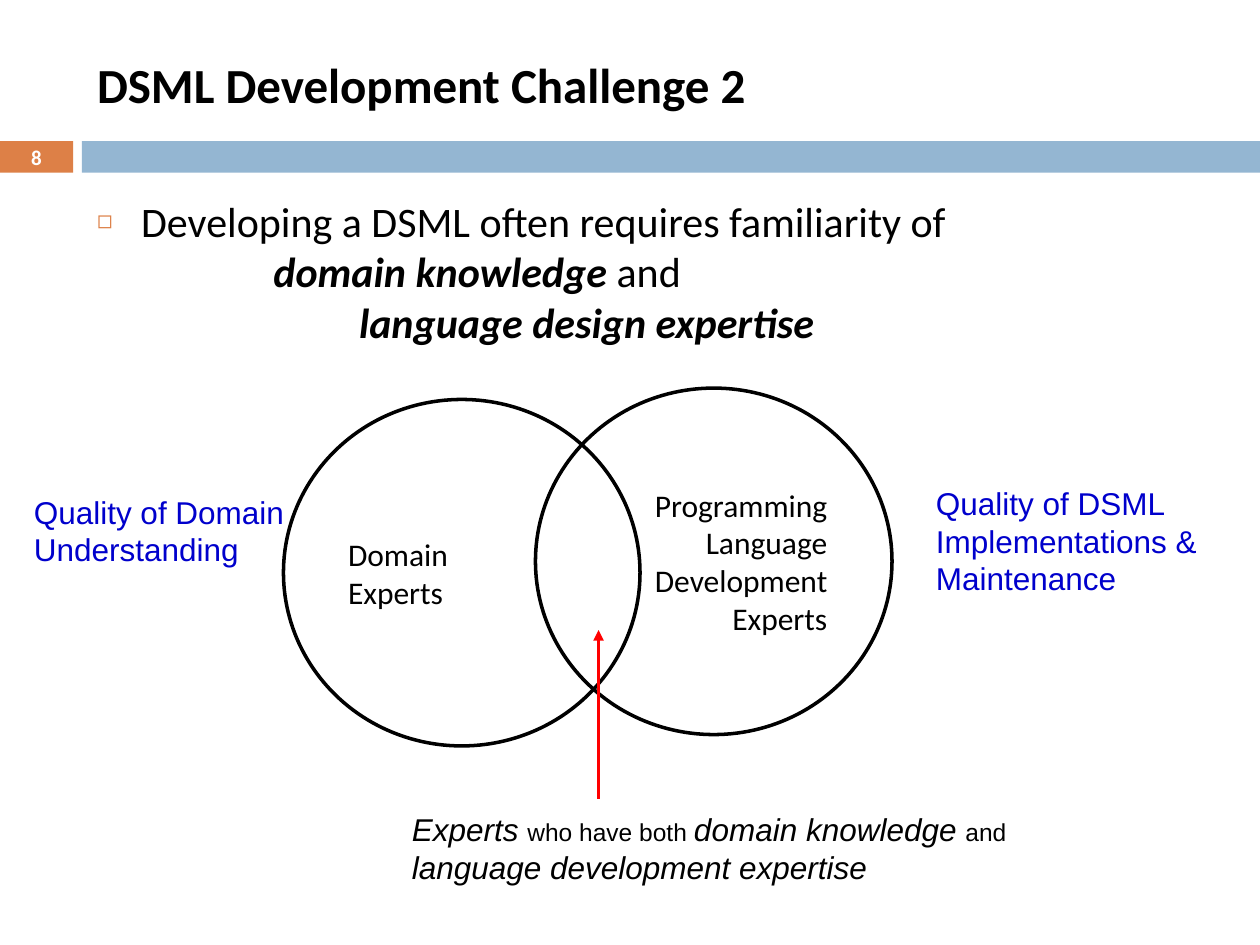
from lxml import etree
from pptx import Presentation
from pptx.dml.color import RGBColor
from pptx.enum import shapes as sh, text as tx
from pptx.oxml.ns import qn
from pptx.util import Inches, Pt

BLACK = RGBColor(0, 0, 0)
WHITE = RGBColor(255, 255, 255)
RED = RGBColor(255, 0, 0)
BLUE = RGBColor(0, 0, 0xCC)
ORANGE = RGBColor(0xDD, 0x80, 0x47)
STEEL = RGBColor(0x94, 0xB6, 0xD2)

LEFT, CENTER, RIGHT = tx.PP_ALIGN.LEFT, tx.PP_ALIGN.CENTER, tx.PP_ALIGN.RIGHT
TOP, MIDDLE = tx.MSO_ANCHOR.TOP, tx.MSO_ANCHOR.MIDDLE


def style(font, size, color=BLACK, name="Calibri", bold=False):
    font.size, font.name, font.bold = Pt(size), name, bold
    font.color.rgb = color


def place(shape, *box):
    shape.left, shape.top, shape.width, shape.height = map(Inches, box)


def frame(shape, anchor):
    body = shape.text_frame
    body.word_wrap = True
    body.auto_size = tx.MSO_AUTO_SIZE.NONE
    body.vertical_anchor = anchor
    return body


def write(shape, words, size, align=LEFT, anchor=MIDDLE, **look):
    par = frame(shape, anchor).paragraphs[0]
    par.text = words
    par.alignment = align
    style(par.font, size, **look)


def add_label(slide, box, words, size, **look):
    label = slide.shapes.add_textbox(*map(Inches, box))
    write(label, words, size, **look)


def add_bar(slide, left, width, color):
    bar = slide.shapes.add_shape(
        sh.MSO_SHAPE.RECTANGLE, *map(Inches, (left, 1.12, width, 0.25)))
    bar.shadow.inherit = False
    bar.fill.solid()
    bar.fill.fore_color.rgb = color
    bar.line.fill.background()


def add_circle(slide, left, top, words, align):
    ring = slide.shapes.add_shape(
        sh.MSO_SHAPE.OVAL, *map(Inches, (left, top, 2.83, 2.75)))
    ring.shadow.inherit = False
    ring.fill.background()
    ring.line.color.rgb = BLACK
    ring.line.width = Pt(2)
    write(ring, words, 18, align)


def add_arrow(slide, x, start, end):
    arrow = slide.shapes.add_connector(
        sh.MSO_CONNECTOR.STRAIGHT, *map(Inches, (x, start, x, end)))
    arrow.line.color.rgb = RED
    arrow.line.width = Pt(2)
    etree.SubElement(arrow.line._get_or_add_ln(), qn("a:tailEnd"), type="triangle")
    etree.SubElement(arrow._element.spPr, qn("a:effectLst"))


def set_bullet(par, margin, mark=None):
    """Set the left margin; with a mark, hang a bullet in that margin."""
    props = par._p.get_or_add_pPr()
    props.set("marL", str(Inches(margin)))
    props.set("indent", str(-Inches(margin) if mark else 0))
    if not mark:
        etree.SubElement(props, qn("a:buNone"))
        return
    color = etree.SubElement(props, qn("a:buClr"))
    etree.SubElement(color, qn("a:srgbClr"), val=str(ORANGE))
    etree.SubElement(props, qn("a:buSzPct"), val="60000")
    etree.SubElement(props, qn("a:buChar"), char=mark)


def fill_body(shape):
    lines = [
        (0.35, "◻", [("Developing a DSML often requires familiarity of", False)]),
        (1.4, None, [("domain knowledge", True), (" and", False)]),
        (2.08, None, [("language design expertise", True)]),
    ]
    body = frame(shape, TOP)
    for i, (margin, mark, runs) in enumerate(lines):
        par = body.add_paragraph() if i else body.paragraphs[0]
        par.space_before = Pt(0 if i else 7)
        set_bullet(par, margin, mark)
        for words, strong in runs:
            run = par.add_run()
            run.text = words
            style(run.font, 24, bold=strong)
            run.font.italic = strong


def add_caption(slide):
    box = slide.shapes.add_textbox(*map(Inches, (3.17, 6.38, 5.58, 0.71)))
    par = frame(box, TOP).paragraphs[0]
    for words, key in [("Experts ", True), ("who have both ", False),
                       ("domain knowledge ", True), ("and ", False),
                       ("language development expertise", True)]:
        run = par.add_run()
        run.text = words
        style(run.font, 18 if key else 14, name="Arial")
        run.font.italic = key


def main():
    deck = Presentation()
    deck.slide_width, deck.slide_height = Inches(10), Inches(7.5)
    slide = deck.slides.add_slide(deck.slide_layouts[1])
    title, body = slide.placeholders

    add_bar(slide, 0, 0.58, ORANGE)
    add_bar(slide, 0.65, 9.35, STEEL)
    place(title, 0.67, 0.25, 8.92, 0.83)
    write(title, "DSML Development Challenge 2", 28, bold=True)
    place(body, 0.67, 1.5, 8.92, 1.25)
    fill_body(body)
    add_label(slide, (0, 1.11, 0.58, 0.27), "8", 12,
              align=CENTER, color=WHITE, bold=True)

    add_circle(slide, 2.25, 3.17, "Domain\vExperts", LEFT)
    add_circle(slide, 4.25, 3.08, "Programming Language Development Experts", RIGHT)
    add_caption(slide)
    add_arrow(slide, 4.75, 6.34, 5)
    for left, top, words in [
            (7.33, 3.75, "Quality of DSML Implementations & Maintenance"),
            (0.17, 3.67, "Quality of Domain Understanding")]:
        add_label(slide, (left, top, 2.42, 1.08), words, 18, color=BLUE, name="Arial")

    deck.save("out.pptx")


if __name__ == "__main__":
    main()
